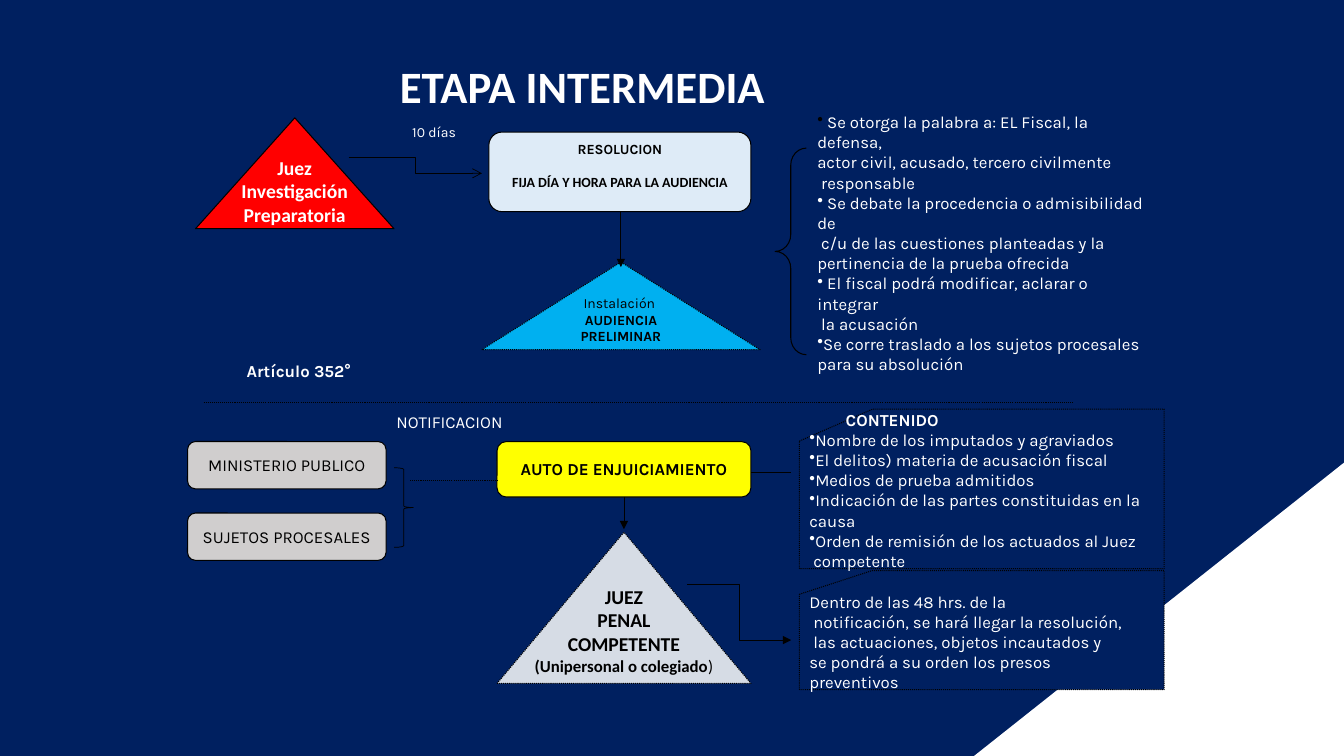
from dataclasses import dataclass
from lxml import etree
from pptx import Presentation, util as u
from pptx.dml import color
from pptx.enum import dml, shapes, text
from pptx.oxml import ns

SHAPE = shapes.MSO_SHAPE
LINK = shapes.MSO_CONNECTOR
CENTER, LEFT = text.PP_ALIGN.CENTER, text.PP_ALIGN.LEFT


class Theme:
    navy, white, black = "002060", "FFFFFF", "000000"
    red, yellow, blue = "FF0000", "FFFF00", "00B0F0"
    ice, steel, gray = "DEEBF7", "D6DCE5", "D0CECE"
    heading, body = "Calibri", "Karla"
    title, large, normal, small = 32, 14, 12, 10
    thin, line = 0.5, 0.75


@dataclass
class Box:
    left: float
    top: float
    width: float
    height: float

    def inside(self, left, top, width, height):
        return Box(self.left + left, self.top + top, width, height)

    def lengths(self):
        return [u.Pt(n) for n in (self.left, self.top, self.width, self.height)]


@dataclass
class Span:
    words: str
    size: float = Theme.normal
    color: str = Theme.white
    bold: bool = False
    font: str = Theme.body


@dataclass
class Para:
    spans: list
    bullet: bool = False
    indent: float = 0
    before: float = 0


def rgb(value):
    return color.RGBColor.from_string(value)


def paras(*lines, **style):
    """One paragraph per line; a leading bullet sign makes a bulleted one."""
    return [Para([Span(line.removeprefix("•"), **style)], line.startswith("•")) for line in lines]


# Basic parts
def write(shape, content, align=CENTER, lift=0, wrap=False, anchor=text.MSO_ANCHOR.MIDDLE):
    frame = shape.text_frame
    frame.word_wrap = wrap
    frame.vertical_anchor = anchor
    frame.margin_bottom = u.Pt(3.6 + lift)
    for number, item in enumerate(content):
        para = frame.add_paragraph() if number else frame.paragraphs[0]
        para.alignment = align
        para.space_before = u.Pt(item.before)
        settings = para._p.get_or_add_pPr()
        settings.set("marL", str(u.Pt(item.indent)))
        settings.set("indent", "0")
        if item.bullet:
            etree.SubElement(settings, ns.qn("a:buChar")).set("char", "•")
        for part in item.spans:
            span = para.add_run()
            span.text = part.words
            span.font.size, span.font.name, span.font.bold = u.Pt(part.size), part.font, part.bold
            span.font.color.rgb = rgb(part.color)


def style_line(line, weight, dotted):
    line.color.rgb = rgb(Theme.black)
    line.width = u.Pt(weight)
    if dotted:
        line.dash_style = dml.MSO_LINE.ROUND_DOT


def draw(page, kind, box, fill=None, weight=Theme.line, dotted=False):
    shape = page.shapes.add_shape(kind, *box.lengths())
    shape.shadow.inherit = False
    if fill:
        shape.fill.solid()
        shape.fill.fore_color.rgb = rgb(fill)
    else:
        shape.fill.background()
    if weight:
        style_line(shape.line, weight, dotted)
    else:
        shape.line.fill.background()
    return shape


def label(page, box, content, **layout):
    write(page.shapes.add_textbox(*box.lengths()), content, **layout)


def connect(page, box, kind=LINK.STRAIGHT, weight=Theme.line, dotted=False, arrow=None):
    """Join the top left corner of the box to its bottom right corner."""
    ends = (box.left, box.top, box.left + box.width, box.top + box.height)
    link = page.shapes.add_connector(kind, *[u.Pt(n) for n in ends])
    style_line(link.line, weight, dotted)
    if arrow:
        etree.SubElement(link.line._get_or_add_ln(), ns.qn("a:tailEnd")).set("type", arrow)
    etree.SubElement(link._element.spPr, ns.qn("a:effectLst"))


# Background and title
def backdrop(page, box):
    page.background.fill.solid()
    page.background.fill.fore_color.rgb = rgb(Theme.navy)
    draw(page, SHAPE.ISOSCELES_TRIANGLE, box, Theme.white, weight=0)


def heading(page, box):
    label(page, box, paras("ETAPA INTERMEDIA", size=Theme.title, bold=True, font=Theme.heading),
          align=LEFT, wrap=True, anchor=text.MSO_ANCHOR.TOP)


# Upper half: from the judge to the preliminary hearing
def hearing(page, box):
    judge = draw(page, SHAPE.FLOWCHART_EXTRACT, box.inside(5.7, 2.2, 141.8, 79.2), Theme.red)
    write(judge, paras("Juez", "Investigación", "Preparatoria", size=Theme.large, bold=True,
                       font=Theme.heading), lift=14.6)
    label(page, box.inside(141.8, 0.8, 68.4, 23), paras("10 días", size=Theme.small))
    connect(page, box.inside(115.1, 30.3, 95.1, 11.5), LINK.ELBOW, Theme.thin, arrow="arrow")

    ink = dict(size=Theme.small, color=Theme.black, bold=True)
    ruling = draw(page, SHAPE.FLOWCHART_ALTERNATE_PROCESS,
                  box.inside(215.2, 12.3, 187.2, 56.9), Theme.ice)
    date = paras("FIJA DÍA Y HORA PARA LA AUDIENCIA", font=Theme.heading, **ink)
    date[0].before = 12
    write(ruling, paras("RESOLUCION", **ink) + date, lift=9)

    start = draw(page, SHAPE.FLOWCHART_EXTRACT, box.inside(210.2, 105.2, 198.7, 62.6),
                 Theme.blue, dotted=True)
    opening = paras("Instalación ", size=Theme.small, color=Theme.black)
    write(start, opening + paras("AUDIENCIA", "PRELIMINAR", **ink), lift=11.7)
    connect(page, box.inside(309.5, 69.2, 0, 39.6), arrow="triangle")

    brace = draw(page, SHAPE.LEFT_BRACE, box.inside(419.7, 23.8, 22.3, 147.6))
    brace.adjustments[0] = 0.543
    first = Para([Span(" ", color=Theme.black),
                  Span("Se otorga la palabra a: EL Fiscal, la defensa,")], bullet=True)
    label(page, box.inside(442.7, 0.8, 249.8, 181.4), [first] + paras(
        "actor civil, acusado, tercero civilmente",
        " responsable",
        "• Se debate la procedencia o admisibilidad de",
        " c/u de las cuestiones planteadas y la",
        "pertinencia de la prueba ofrecida",
        "• El fiscal podrá modificar, aclarar o integrar",
        " la acusación",
        "•Se corre traslado a los sujetos procesales",
        "para su absolución"), align=LEFT)
    label(page, box.inside(11.4, 165.7, 136.1, 33.8), paras("Artículo 352°", bold=True))


# Lower half: the indictment order, who is notified and what follows
def indictment(page, box):
    connect(page, box.inside(11.4, 0.3, 620.7, 0), dotted=True)
    order = draw(page, SHAPE.FLOWCHART_ALTERNATE_PROCESS,
                 box.inside(221, 28.4, 181.4, 39.6), Theme.yellow)
    write(order, paras("AUTO DE ENJUICIAMIENTO", color=Theme.black, bold=True))

    # Notified parties
    label(page, box.inside(130.2, 5.3, 113.8, 17.3), paras("NOTIFICACION"))
    for row, party in enumerate(("MINISTERIO PUBLICO", "SUJETOS PROCESALES")):
        party_box = box.inside(0, 28.4 + 51.1 * row, 141.8, 33.8)
        shape = draw(page, SHAPE.FLOWCHART_ALTERNATE_PROCESS, party_box, Theme.gray)
        write(shape, paras(party, color=Theme.black))
    draw(page, SHAPE.RIGHT_BRACE, box.inside(147.5, 47.1, 13.7, 56.9), weight=Theme.thin)
    connect(page, box.inside(159, 56.4, 62, 0), dotted=True)

    # Content of the order
    connect(page, box.inside(402.4, 50.7, 28.8, 0))
    card = draw(page, SHAPE.FLOWCHART_CARD, box.inside(437, 5.3, 260.6, 113.8), dotted=True)
    caption = Para([Span("CONTENIDO", bold=True)], indent=26)
    write(card, [caption] + paras(
        "•Nombre de los imputados y agraviados",
        "•El delitos) materia de acusación fiscal",
        "•Medios de prueba admitidos",
        "•Indicación de las partes constituidas en la",
        "causa",
        "•Orden de remisión de los actuados al Juez",
        " competente"), align=LEFT, lift=21)

    # Competent judge and deadline
    connect(page, box.inside(311.7, 68, 0, 23), weight=Theme.thin, arrow="triangle")
    judge = draw(page, SHAPE.FLOWCHART_EXTRACT, box.inside(221, 93.2, 181.4, 108),
                 Theme.steel, dotted=True)
    ink = dict(color=Theme.black, font=Theme.heading)
    bench = Para([Span("(Unipersonal o colegiado", bold=True, **ink), Span(")", **ink)])
    write(judge, paras("JUEZ", "PENAL", "COMPETENTE", size=Theme.large, bold=True, **ink)
          + [bench], lift=22)
    connect(page, box.inside(357, 130.6, 74.2, 39.6), LINK.ELBOW, Theme.thin, arrow="triangle")
    deadline = draw(page, SHAPE.FLOWCHART_CARD, box.inside(437, 120.5, 260.6, 85),
                    Theme.navy, dotted=True)
    write(deadline, paras(
        "Dentro de las 48 hrs. de la",
        " notificación, se hará llegar la resolución,",
        " las actuaciones, objetos incautados y",
        "se pondrá a su orden los presos",
        "preventivos"), align=LEFT)


def main():
    deck = Presentation()
    deck.slide_width, deck.slide_height = u.Pt(960), u.Pt(540)
    page = deck.slides.add_slide(deck.slide_layouts[6])
    backdrop(page, Box(691.2, 329, 541.4, 214.6))
    heading(page, Box(278.6, 38.2, 311.8, 46.1))
    hearing(page, Box(134, 82, 698, 200))
    indictment(page, Box(134, 287, 698, 206))
    deck.save("out.pptx")


if __name__ == "__main__":
    main()
